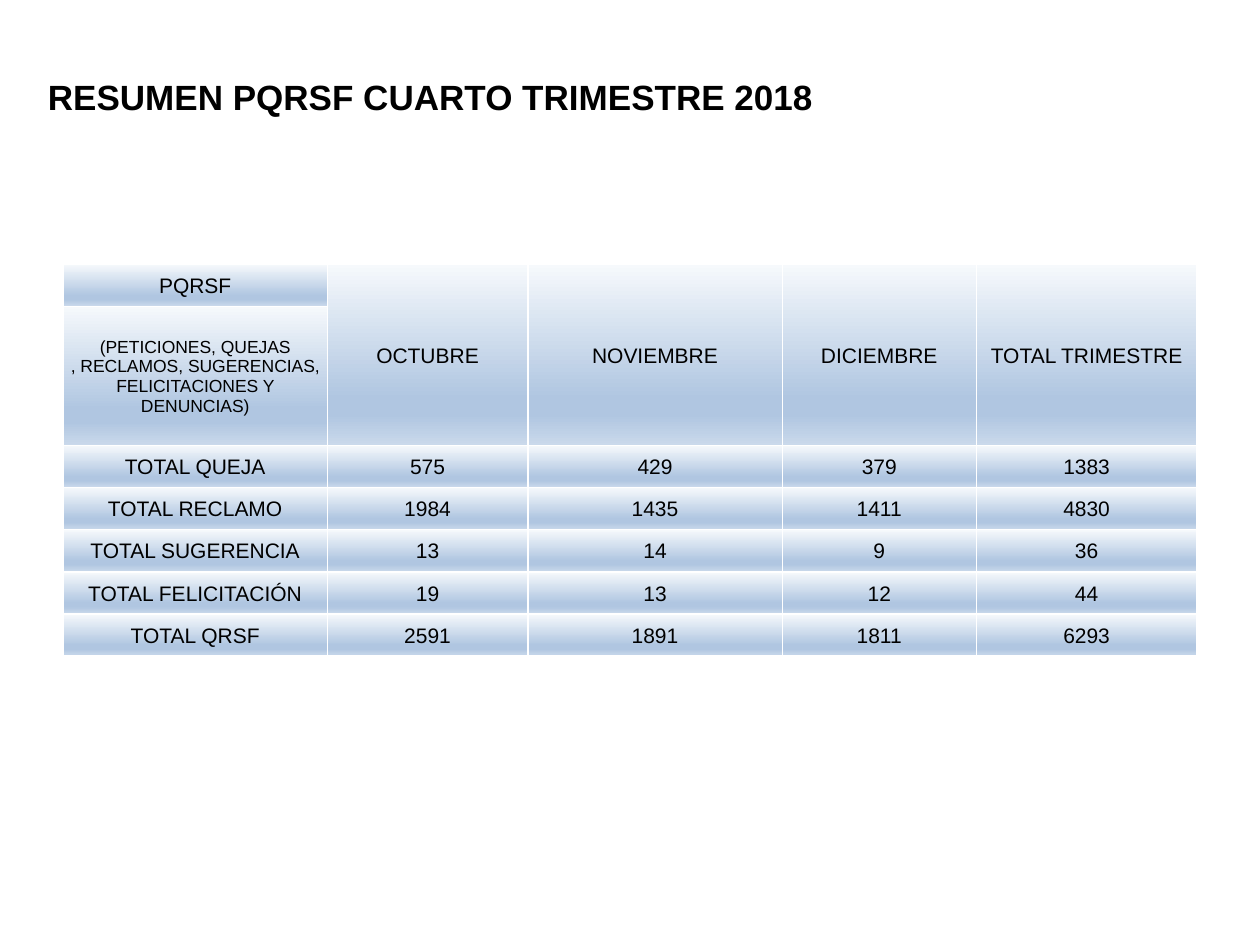
from lxml import etree
from pptx import Presentation
from pptx import util as u
from pptx.dml.color import RGBColor
from pptx.enum import text
from pptx.oxml import ns

FONT = "Arial"
BLACK = RGBColor(0x00, 0x00, 0x00)
WHITE = RGBColor(0xFF, 0xFF, 0xFF)
PALE = RGBColor(0xF6, 0xF9, 0xFC)
BLUE = RGBColor(0xB0, 0xC6, 0xE1)
LIGHT_BLUE = RGBColor(0xCA, 0xD9, 0xEB)
GRADIENT = [(0, PALE), (74, BLUE), (83, BLUE), (100, LIGHT_BLUE)]

COLUMN_WIDTHS = [5.33, 4.04, 5.13, 3.91, 4.45]
ROW_HEIGHTS = [0.85, 2.8] + [0.85] * 5
HEADERS = ["PQRSF", "OCTUBRE", "NOVIEMBRE", "DICIEMBRE", "TOTAL TRIMESTRE"]
DETAIL = "(PETICIONES, QUEJAS\v, RECLAMOS, SUGERENCIAS, FELICITACIONES Y DENUNCIAS)"
TOTALS = [
    ("TOTAL QUEJA", 575, 429, 379, 1383),
    ("TOTAL RECLAMO", 1984, 1435, 1411, 4830),
    ("TOTAL SUGERENCIA", 13, 14, 9, 36),
    ("TOTAL FELICITACIÓN", 19, 13, 12, 44),
    ("TOTAL QRSF", 2591, 1891, 1811, 6293),
]


def write(paragraph, content, size, alignment, bold=False):
    paragraph.text = str(content)
    paragraph.alignment = alignment
    font = paragraph.font
    font.name, font.size, font.bold = FONT, u.Pt(size), bold
    font.color.rgb = BLACK


def add_element(parent, tag, **attributes):
    return etree.SubElement(parent, ns.qn(tag), attributes)


def style_cell(cell):
    cell.vertical_anchor = text.MSO_ANCHOR.MIDDLE
    cell.margin_left = cell.margin_right = cell.margin_top = u.Cm(0.03)
    cell.margin_bottom = 0
    properties = cell._tc.get_or_add_tcPr()
    for side in ("a:lnL", "a:lnR", "a:lnT", "a:lnB"):
        line = add_element(properties, side, w=str(u.Pt(1)))
        fill = add_element(line, "a:solidFill")
        add_element(fill, "a:srgbClr", val=str(WHITE))
    gradient = add_element(properties, "a:gradFill", rotWithShape="1")
    stops = add_element(gradient, "a:gsLst")
    for percent, color in GRADIENT:
        stop = add_element(stops, "a:gs", pos=str(percent * 1000))
        add_element(stop, "a:srgbClr", val=str(color))
    add_element(gradient, "a:lin", ang="5400000", scaled="0")


def place_title(slide, left, top, width, height):
    title = slide.shapes.title
    title.left, title.top, title.width, title.height = left, top, width, height
    frame = title.text_frame
    frame.vertical_anchor = text.MSO_ANCHOR.MIDDLE
    write(frame.paragraphs[0], "RESUMEN PQRSF CUARTO TRIMESTRE 2018", 20,
          text.PP_ALIGN.LEFT, bold=True)


def place_summary_table(slide, left, top):
    rows = [HEADERS, [DETAIL] + [""] * 4, *TOTALS]
    shape = slide.shapes.add_table(
        len(rows), len(HEADERS), left, top,
        u.Cm(sum(COLUMN_WIDTHS)), u.Cm(sum(ROW_HEIGHTS)))
    table = shape.table
    table.first_row = table.horz_banding = False
    for column, width in zip(table.columns, COLUMN_WIDTHS):
        column.width = u.Cm(width)
    for row, height in zip(table.rows, ROW_HEIGHTS):
        row.height = u.Cm(height)
    for row_index, values in enumerate(rows):
        for column_index, value in enumerate(values):
            cell = table.cell(row_index, column_index)
            style_cell(cell)
            write(cell.text_frame.paragraphs[0], value,
                  10 if value == DETAIL else 12, text.PP_ALIGN.CENTER)
    for column_index in range(1, len(HEADERS)):
        table.cell(0, column_index).merge(table.cell(1, column_index))


def main():
    presentation = Presentation()
    presentation.slide_width, presentation.slide_height = u.Cm(25.4), u.Cm(19.05)
    slide = presentation.slides.add_slide(presentation.slide_layouts[5])
    place_title(slide, u.Cm(0.71), u.Cm(0.76), u.Cm(23.42), u.Cm(2.36))
    place_summary_table(slide, u.Cm(1.27), u.Cm(5.33))
    presentation.save("out.pptx")


if __name__ == "__main__":
    main()
